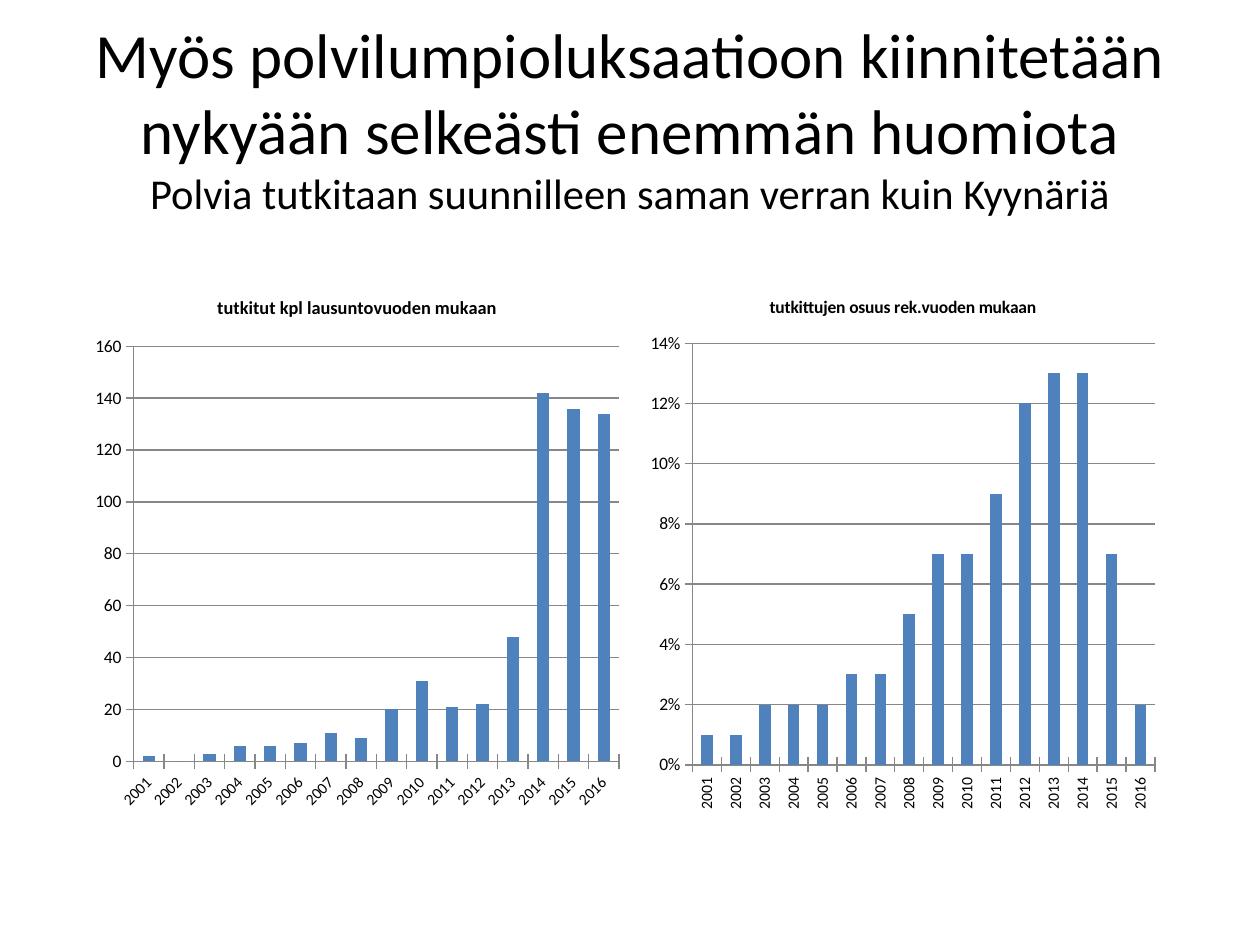
from pptx import Presentation
from pptx.chart.data import CategoryChartData
from pptx.dml.color import RGBColor
from pptx.enum.chart import XL_CHART_TYPE as ChartType, XL_TICK_MARK as TickMark
from pptx.enum.text import MSO_ANCHOR as Anchor, MSO_AUTO_SIZE as AutoSize, PP_ALIGN as Align
from pptx.util import Inches, Pt


def color(hex_string):
    return RGBColor.from_string(hex_string)


def style_font(font, size, fill="000000", bold=False, name="Calibri"):
    font.name, font.size, font.bold = name, Pt(size), bold
    font.color.rgb = color(fill)


def add_text(paragraph, text, **style):
    run = paragraph.add_run()
    run.text = text
    style_font(run.font, **style)


class SlideBuilder:
    BAR = "4F81BD"
    LINE = "878787"

    def __init__(self, presentation):
        # Layout 5 is "Title Only"
        self.slide = presentation.slides.add_slide(presentation.slide_layouts[5])

    def title(self, heading, subheading, left, top, width, height):
        shape = self.slide.shapes.title
        shape.left, shape.top = Inches(left), Inches(top)
        shape.width, shape.height = Inches(width), Inches(height)
        frame = shape.text_frame
        frame.word_wrap, frame.auto_size = True, AutoSize.NONE
        frame.vertical_anchor = Anchor.MIDDLE
        paragraph = frame.paragraphs[0]
        paragraph.alignment = Align.CENTER
        add_text(paragraph, heading, size=36)
        paragraph.add_line_break()
        add_text(paragraph, subheading, size=24.3)

    def column_chart(self, title, categories, values, left, width, *, title_size,
                     maximum, step, label_angle, number_format="General"):
        data = CategoryChartData(number_format=number_format)
        data.categories = categories
        data.add_series("Series 1", values)
        chart = self.slide.shapes.add_chart(
            ChartType.COLUMN_CLUSTERED, Inches(left), Inches(2.18),
            Inches(width), Inches(4.33), data).chart
        style_font(chart.font, 10)
        chart.has_legend = False
        chart.has_title = True
        add_text(chart.chart_title.text_frame.paragraphs[0], title,
                 size=title_size, bold=True)
        chart.chart_title.include_in_layout = False

        # Columns
        plot = chart.plots[0]
        plot.gap_width, plot.vary_by_categories = 150, False
        fill = plot.series[0].format.fill
        fill.solid()
        fill.fore_color.rgb = color(self.BAR)

        # Axes
        value_axis, category_axis = chart.value_axis, chart.category_axis
        for axis, size in ((value_axis, 10), (category_axis, 9)):
            axis.major_tick_mark = TickMark.CROSS
            axis.minor_tick_mark = TickMark.NONE
            style_font(axis.tick_labels.font, size)
            self.line(axis.format.line)
        value_axis.minimum_scale, value_axis.maximum_scale = 0, maximum
        value_axis.major_unit = step
        value_axis.has_major_gridlines = True
        self.line(value_axis.major_gridlines.format.line)
        value_axis.tick_labels.number_format = number_format
        value_axis.tick_labels.number_format_is_linked = False
        # Label rotation is in 60000ths of a degree
        for body in chart.element.xpath(".//c:catAx/c:txPr/a:bodyPr"):
            body.set("rot", str(label_angle * 60000))
            body.set("vert", "horz")

    def line(self, line):
        line.color.rgb = color(self.LINE)
        line.width = Pt(0.75)


def main():
    presentation = Presentation()
    presentation.slide_width, presentation.slide_height = Inches(10), Inches(7.5)
    builder = SlideBuilder(presentation)

    builder.title(
        "Myös polvilumpioluksaatioon kiinnitetään nykyään selkeästi enemmän huomiota",
        "Polvia tutkitaan suunnilleen saman verran kuin Kyynäriä",
        0.5, 0.3, 9, 1.25)

    years = [str(year) for year in range(2001, 2017)]
    # Number examined, by year of statement
    counts = [2, 0, 3, 6, 6, 7, 11, 9, 20, 31, 21, 22, 48, 142, 136, 134]
    builder.column_chart(
        "tutkitut kpl lausuntovuoden mukaan", years, counts, 0.67, 4.33,
        title_size=10.5, maximum=160, step=20, label_angle=-45)
    # Share examined, by year of registration
    percentages = [1, 1, 2, 2, 2, 3, 3, 5, 7, 7, 9, 12, 13, 13, 7, 2]
    builder.column_chart(
        "tutkittujen osuus rek.vuoden mukaan", years,
        [percentage / 100 for percentage in percentages], 5.08, 4.17,
        title_size=10, maximum=0.14, step=0.02, label_angle=-90,
        number_format="0%")

    presentation.save("out.pptx")


if __name__ == "__main__":
    main()
